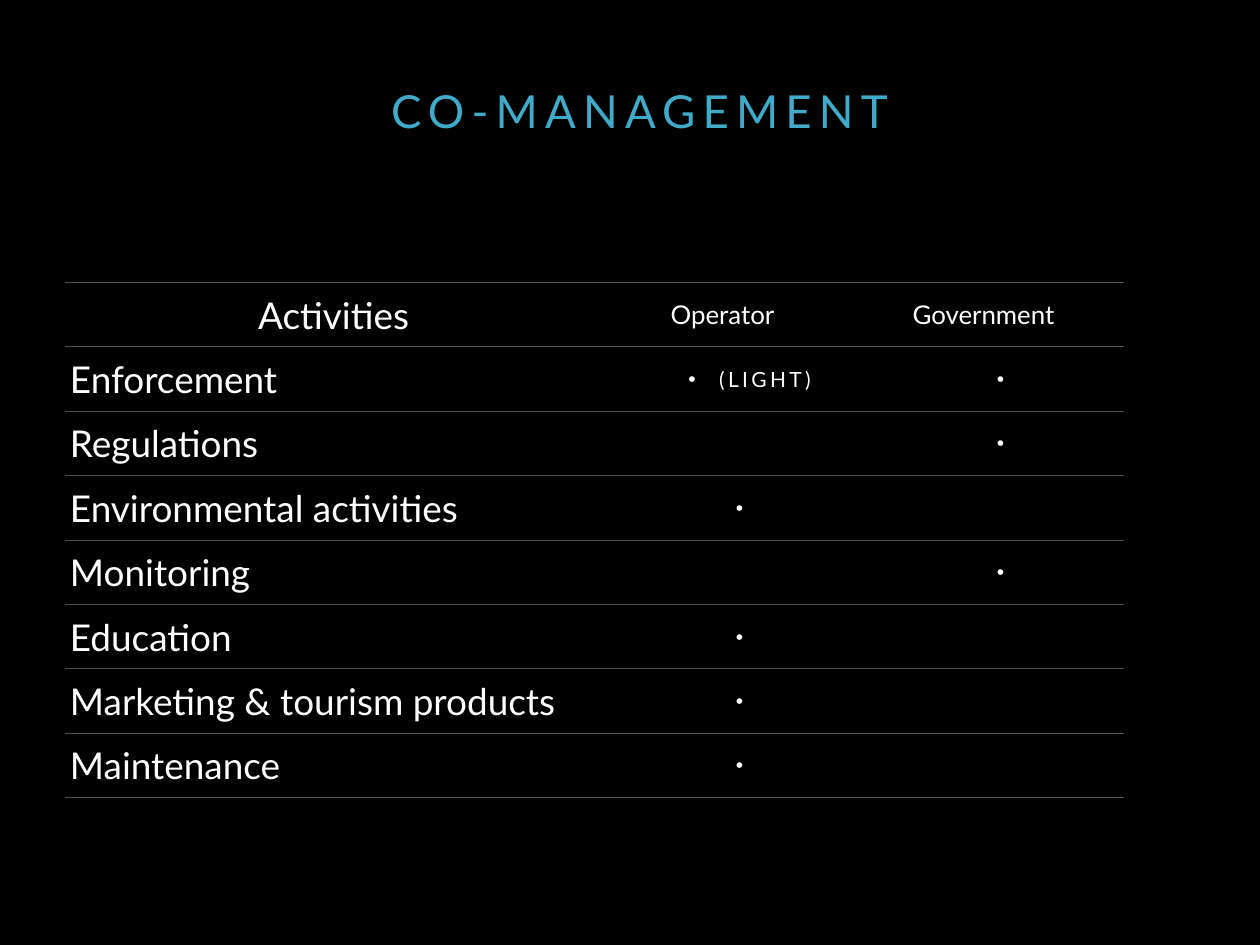
"""Build the co-management slide with its table of who carries out which activity."""
from dataclasses import dataclass

from lxml import etree
from pptx import Presentation
from pptx.dml.color import RGBColor
from pptx.enum.text import MSO_ANCHOR, PP_ALIGN
from pptx.oxml.ns import qn
from pptx.util import Inches, Pt

CENTER, LEFT = PP_ALIGN.CENTER, PP_ALIGN.LEFT
TOP, MIDDLE = MSO_ANCHOR.TOP, MSO_ANCHOR.MIDDLE


@dataclass(frozen=True)
class Theme:
    font: str = "Lato"
    background: str = "000000"
    title: str = "42AAC9"
    text: str = "FFFFFF"
    rule: str = "4F4F4F"
    title_size: int = 37
    activity_size: int = 30
    party_size: int = 21
    mark_size: int = 17


THEME = Theme()
INSET = Inches(0.06)
COLUMN_WIDTHS = (6.07, 2.71, 3.18)
ROW_HEIGHT = 0.7275
HEADINGS = ("Activities", "Operator", "Government")
MARK = " "
DUTIES = (
    ("Enforcement", " (LIGHT)", MARK),
    ("Regulations", "", MARK),
    ("Environmental activities", MARK, ""),
    ("Monitoring", "", MARK),
    ("Education", MARK, ""),
    ("Marketing & tourism products", MARK, ""),
    ("Maintenance", MARK, ""),
)


def write(paragraph, words, size, color, align, spacing=0):
    paragraph.text = words
    paragraph.alignment = align
    for run in paragraph.runs:
        run.font.name = THEME.font
        run.font.size = Pt(size)
        run.font.color.rgb = RGBColor.from_string(color)
        run.font._element.set("spc", str(round(spacing * 100)))


def rule_cell(cell):
    properties = cell._tc.get_or_add_tcPr()
    for edge in ("lnL", "lnR", "lnT", "lnB"):
        line = etree.SubElement(properties, qn(f"a:{edge}"), w=str(Pt(1)))
        if edge in ("lnT", "lnB"):
            fill = etree.SubElement(line, qn("a:solidFill"))
            etree.SubElement(fill, qn("a:srgbClr"), val=THEME.rule)
        else:
            etree.SubElement(line, qn("a:noFill"))
    cell.fill.background()


deck = Presentation()
deck.slide_width, deck.slide_height = Inches(14.22), Inches(10.67)
slide = deck.slides.add_slide(deck.slide_layouts[6])
slide.background.fill.solid()
slide.background.fill.fore_color.rgb = RGBColor.from_string(THEME.background)

title = slide.shapes.add_textbox(Inches(0.52), Inches(0.88), Inches(13.4), Inches(0.91)).text_frame
title.word_wrap = True
title.vertical_anchor = TOP
title.margin_left = title.margin_right = title.margin_top = title.margin_bottom = INSET
write(title.paragraphs[0], "CO-MANAGEMENT", THEME.title_size, THEME.title, CENTER, 5.9)

rows = (HEADINGS, *DUTIES)
duties = slide.shapes.add_table(
    len(rows), len(HEADINGS), Inches(0.73), Inches(3.19),
    Inches(sum(COLUMN_WIDTHS)), Inches(ROW_HEIGHT * len(rows)),
).table
duties.first_row = duties.horz_banding = False
for column, width in zip(duties.columns, COLUMN_WIDTHS):
    column.width = Inches(width)

for row_index, row in enumerate(rows):
    duties.rows[row_index].height = Inches(ROW_HEIGHT)
    for column_index, words in enumerate(row):
        cell = duties.cell(row_index, column_index)
        rule_cell(cell)
        cell.vertical_anchor = MIDDLE
        cell.margin_left = cell.margin_right = cell.margin_top = cell.margin_bottom = INSET
        if not words:
            continue
        paragraph = cell.text_frame.paragraphs[0]
        if column_index == 0:
            align = LEFT if row_index else CENTER
            write(paragraph, words, THEME.activity_size, THEME.text, align)
        elif row_index == 0:
            write(paragraph, words, THEME.party_size, THEME.text, CENTER)
        else:
            write(paragraph, words, THEME.mark_size, THEME.text, CENTER, 2.7)
            indent = paragraph._p.get_or_add_pPr()
            indent.set("marL", str(Inches(0.86)))
            indent.set("indent", str(Inches(-0.25)))
            etree.SubElement(indent, qn("a:buFont"), typeface="Arial")
            etree.SubElement(indent, qn("a:buChar"), char="•")

deck.save("out.pptx")
